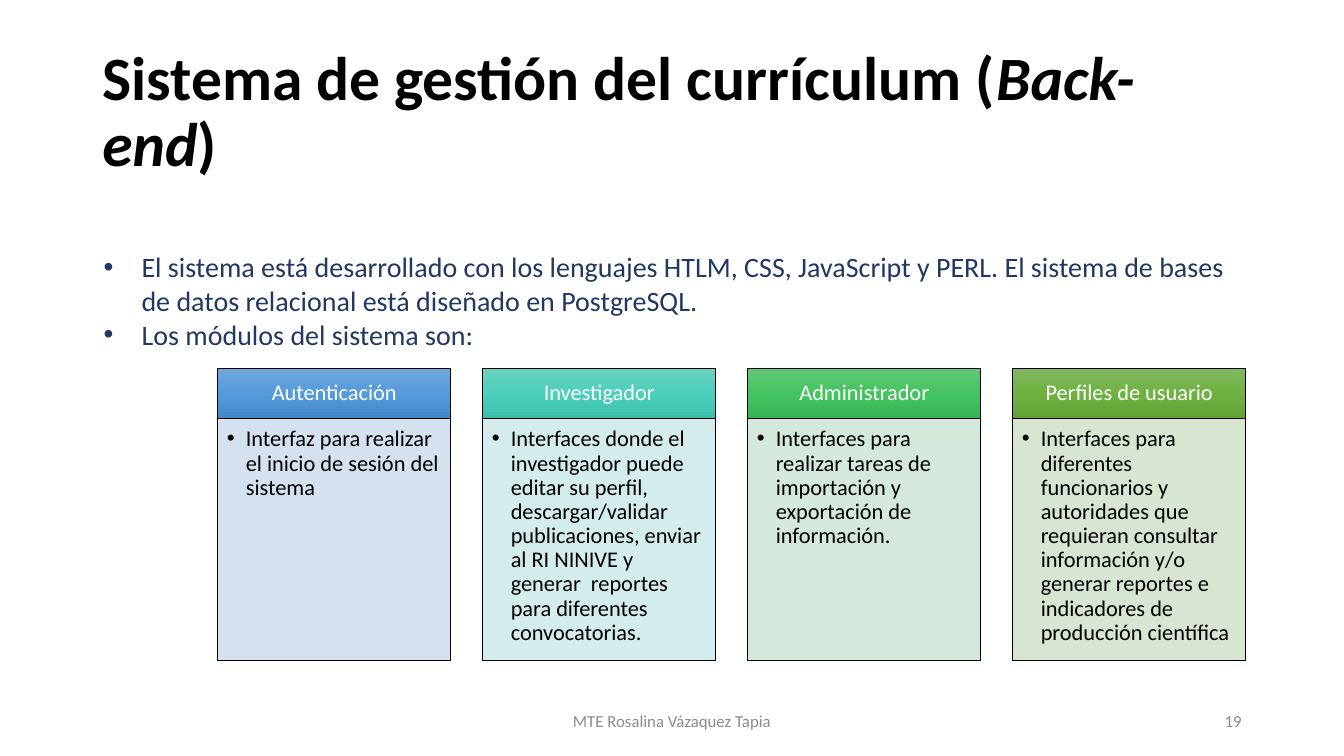
import copy
import pptx
import pptx.dml.color
import pptx.enum.shapes
import pptx.enum.text
import pptx.oxml.ns
import pptx.oxml.xmlchemy
import pptx.util
import lxml.etree

Pt = pptx.util.Pt
RGB = pptx.dml.color.RGBColor
ALIGN = pptx.enum.text.PP_ALIGN
ANCHOR = pptx.enum.text.MSO_ANCHOR
qn = pptx.oxml.ns.qn

FONT = "Calibri"
BLACK = RGB(0x00, 0x00, 0x00)
WHITE = RGB(0xFF, 0xFF, 0xFF)
GRAY = RGB(0x8C, 0x8C, 0x8C)
NAVY = RGB(0x20, 0x38, 0x64)

POINTS = [
    "El sistema está desarrollado con los lenguajes HTLM, CSS, JavaScript y PERL. "
    "El sistema de bases de datos relacional está diseñado en PostgreSQL.",
    "Los módulos del sistema son:",
]
CARDS = [
    ("Autenticación",
     "Interfaz para realizar el inicio de sesión del sistema",
     (RGB(0x71, 0xA6, 0xDB), RGB(0x55, 0x9B, 0xDB), RGB(0x44, 0x8A, 0xCA)),
     RGB(0xD2, 0xDE, 0xEF)),
    ("Investigador",
     "Interfaces donde el investigador puede editar su perfil, descargar/validar "
     "publicaciones, enviar al RI NINIVE y generar  reportes para diferentes convocatorias.",
     (RGB(0x6A, 0xD1, 0xC0), RGB(0x4C, 0xD0, 0xBC), RGB(0x3C, 0xC0, 0xAC)),
     RGB(0xD0, 0xEC, 0xEA)),
    ("Administrador",
     "Interfaces para realizar tareas de importación y exportación de información.",
     (RGB(0x64, 0xC6, 0x77), RGB(0x44, 0xC4, 0x60), RGB(0x36, 0xB5, 0x52)),
     RGB(0xD0, 0xE7, 0xD8)),
    ("Perfiles de usuario",
     "Interfaces para diferentes funcionarios y autoridades que requieran consultar "
     "información y/o generar reportes e indicadores de producción científica",
     (RGB(0x81, 0xB8, 0x61), RGB(0x6F, 0xB2, 0x42), RGB(0x62, 0xA3, 0x36)),
     RGB(0xD5, 0xE3, 0xCF)),
]


def style(para, size, color, align=ALIGN.LEFT, space=1.0):
    para.alignment = align
    para.line_spacing = space
    for run in para.runs:
        run.font.name = FONT
        run.font.size = Pt(size)
        run.font.color.rgb = color


def bullet(para, indent):
    props = para._p.get_or_add_pPr()
    props.set("marL", str(Pt(indent)))
    props.set("indent", str(-Pt(indent)))
    face = lxml.etree.SubElement(props, qn("a:buFont"))
    face.set("typeface", "Arial")
    mark = lxml.etree.SubElement(props, qn("a:buChar"))
    mark.set("char", "•")


def inset(frame, left, top, right, bottom):
    frame.word_wrap = True
    frame.margin_left = Pt(left)
    frame.margin_top = Pt(top)
    frame.margin_right = Pt(right)
    frame.margin_bottom = Pt(bottom)


def rect(slide, left, top, width, height):
    kind = pptx.enum.shapes.MSO_SHAPE.RECTANGLE
    shape = slide.shapes.add_shape(kind, Pt(left), Pt(top), Pt(width), Pt(height))
    shape.shadow.inherit = False
    shape.line.color.rgb = BLACK
    shape.line.width = Pt(0.5)
    return shape


def shade(shape, colors):
    shape.fill.gradient()
    shape.fill.gradient_angle = 270
    stops = next(shape.element.iter(qn("a:gsLst")))
    middle = copy.deepcopy(stops[0])
    middle.set("pos", "50000")
    stops.insert(1, middle)
    for stop, color in zip(shape.fill.gradient_stops, colors):
        stop.color.rgb = color


def heading(slide, left, top, width, height):
    title = slide.shapes.title
    title.left, title.top = Pt(left), Pt(top)
    title.width, title.height = Pt(width), Pt(height)
    frame = title.text_frame
    inset(frame, 7.2, 3.6, 7.2, 3.6)
    frame.auto_size = pptx.enum.text.MSO_AUTO_SIZE.NONE
    frame.vertical_anchor = ANCHOR.MIDDLE
    para = frame.paragraphs[0]
    for text in ("Sistema de gestión del currículum (", "Back-end", ")"):
        run = para.add_run()
        run.text = text
        run.font.bold = True
        run.font.italic = text == "Back-end"
    style(para, 44, BLACK, space=0.9)


def intro(slide, left, top, width, height):
    box = slide.shapes.add_textbox(Pt(left), Pt(top), Pt(width), Pt(height))
    frame = box.text_frame
    inset(frame, 7.2, 3.6, 7.2, 3.6)
    frame.text = "\n".join(POINTS)
    for para in frame.paragraphs:
        bullet(para, 27)
        style(para, 20, NAVY)


def card(slide, left, top, width, height, name, text, colors, tint):
    bar = 36
    head = rect(slide, left, top, width, bar)
    shade(head, colors)
    frame = head.text_frame
    inset(frame, 9, 5, 9, 5)
    frame.vertical_anchor = ANCHOR.MIDDLE
    frame.text = name
    style(frame.paragraphs[0], 16, WHITE, ALIGN.CENTER, 0.9)

    body = rect(slide, left, top + bar, width, height - bar)
    body.fill.solid()
    body.fill.fore_color.rgb = tint
    color = body.element.spPr.find(qn("a:solidFill"))[0]
    lxml.etree.SubElement(color, qn("a:alpha")).set("val", "90000")
    frame = body.text_frame
    inset(frame, 6.5, 6.5, 8.6, 10)
    frame.vertical_anchor = ANCHOR.TOP
    frame.text = text
    bullet(frame.paragraphs[0], 13.5)
    style(frame.paragraphs[0], 16, BLACK, space=0.9)


def modules_row(slide, left, top, width, height):
    gap = 22.9
    count = len(CARDS)
    wide = (width - gap * (count - 1)) / count
    for i, data in enumerate(CARDS):
        card(slide, left + i * (wide + gap), top, wide, height, *data)


def footer(slide, left, top, width, height, text, align):
    box = slide.shapes.add_textbox(Pt(left), Pt(top), Pt(width), Pt(height))
    frame = box.text_frame
    inset(frame, 7.2, 3.6, 7.2, 3.6)
    frame.vertical_anchor = ANCHOR.MIDDLE
    frame.text = text
    style(frame.paragraphs[0], 12, GRAY, align)


def main():
    deck = pptx.Presentation()
    deck.slide_width, deck.slide_height = Pt(960), Pt(540)
    slide = deck.slides.add_slide(deck.slide_layouts[5])
    heading(slide, 66, 28.8, 828, 104.4)
    intro(slide, 67, 175, 818.6, 80)
    modules_row(slide, 155.6, 262.9, 734.2, 208.8)
    footer(slide, 318, 500.5, 324, 28.8, "MTE Rosalina Vázaquez Tapia", ALIGN.CENTER)
    footer(slide, 678, 500.5, 216, 28.8, "19", ALIGN.RIGHT)
    deck.save("out.pptx")


if __name__ == "__main__":
    main()
